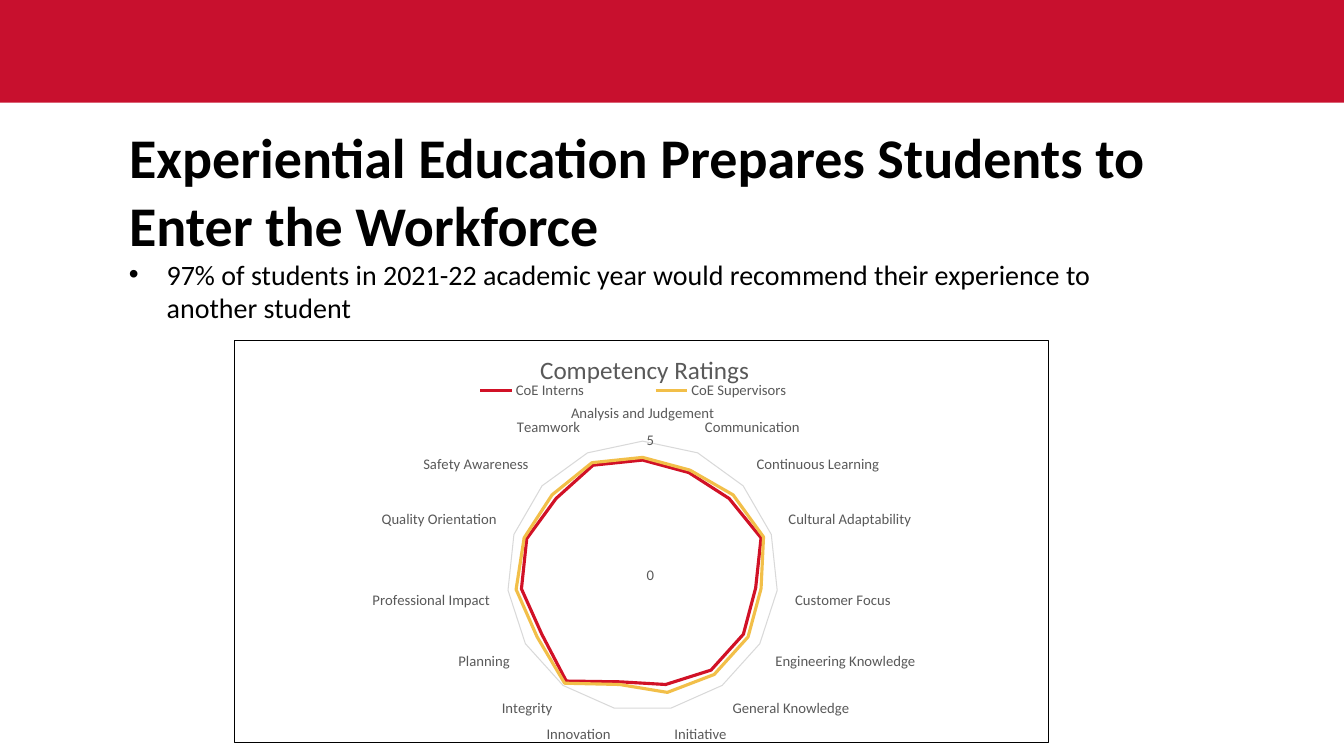
from lxml import etree
from pptx import Presentation
from pptx.chart.data import CategoryChartData as Data
from pptx.dml.color import RGBColor as Rgb
from pptx.enum.chart import XL_CHART_TYPE as Kind, XL_LEGEND_POSITION as Spot, XL_TICK_MARK as Tick
from pptx.enum.shapes import MSO_SHAPE as Shape
from pptx.enum.text import MSO_ANCHOR as Anchor, PP_ALIGN as Align
from pptx.oxml import parse_xml
from pptx.oxml.ns import nsdecls, qn
from pptx.util import Cm, Pt

HUES = {"band": "C8102E", "ink": "000000", "grey": "595959", "grid": "D9D9D9",
        "intern": "D11126", "super": "F2BF49"}
SKILLS = ["Analysis and Judgement", "Communication", "Continuous Learning",
          "Cultural Adaptability", "Customer Focus", "Engineering Knowledge",
          "General Knowledge", "Initiative", "Innovation", "Integrity", "Planning",
          "Professional Impact", "Quality Orientation", "Safety Awareness", "Teamwork"]
RATINGS = [
    ("CoE Interns", "intern",
     [4.3, 4.2, 4.3, 4.6, 4.2, 4.3, 4.3, 4.1, 4, 4.8, 4.3, 4.5, 4.5, 4.3, 4.5]),
    ("CoE Supervisors", "super",
     [4.4, 4.3, 4.5, 4.7, 4.4, 4.5, 4.5, 4.4, 4.1, 4.9, 4.5, 4.7, 4.6, 4.5, 4.6]),
]


def style(font, size, hue="ink", bold=False):
    """Set face, size, colour and weight of a font."""
    font.name, font.size, font.bold = "Calibri", Pt(size), bold
    font.color.rgb = Rgb.from_string(HUES[hue])


def write(frame, text, bullet=False, **look):
    """Write one paragraph into a text frame."""
    frame.word_wrap = True
    frame.vertical_anchor = Anchor.TOP
    para = frame.paragraphs[0]
    para.alignment, para.line_spacing, para.space_before = Align.LEFT, 1.0, Pt(0)
    if bullet:
        props = para._p.get_or_add_pPr()
        props.set("marL", str(Cm(0.95)))
        props.set("indent", str(Cm(-0.95)))
        face = etree.SubElement(props, qn("a:buFont"))
        face.set("typeface", "Arial")
        etree.SubElement(props, qn("a:buChar")).set("char", "•")
    run = para.add_run()
    run.text = text
    style(run.font, **look)


def rule(line, hue, width):
    """Set colour and width of a line."""
    line.color.rgb = Rgb.from_string(HUES[hue])
    line.width = Pt(width)


def place(part, index, *box, inner=False):
    """Give a chart part a fixed layout."""
    for old in part.findall(qn("c:layout")):
        part.remove(old)
    tags = '<c:layoutTarget val="inner"/>' if inner else ""
    tags += '<c:xMode val="edge"/><c:yMode val="edge"/>'
    tags += "".join(f'<c:{key} val="{val}"/>' for key, val in zip("xywh", box))
    part.insert(index, parse_xml(f'<c:layout {nsdecls("c")}><c:manualLayout>{tags}'
                                 '</c:manualLayout></c:layout>'))


class Deck:
    """Hold the deck and its current slide."""

    def __init__(self):
        """Start a wide deck with one title-only slide."""
        self.deck = Presentation()
        self.deck.slide_width, self.deck.slide_height = Cm(33.87), Cm(19.05)
        self.slide = self.deck.slides.add_slide(self.deck.slide_layouts[5])

    def band(self, *box, hue):
        """Add a plain filled band above the title."""
        band = self.slide.shapes.add_shape(Shape.RECTANGLE, *map(Cm, box))
        band.shadow.inherit = False
        band.fill.solid()
        band.fill.fore_color.rgb = Rgb.from_string(HUES[hue])
        band.line.fill.background()

    def title(self, text, *box, **look):
        """Place and fill the title."""
        head = self.slide.shapes.title
        head.left, head.top, head.width, head.height = map(Cm, box)
        write(head.text_frame, text, **look)

    def text(self, text, *box, **look):
        """Add a text box."""
        note = self.slide.shapes.add_textbox(*map(Cm, box))
        write(note.text_frame, text, **look)

    def radar(self, title, cats, rows, *box):
        """Add a framed radar chart."""
        data = Data(number_format="0.0")
        data.categories = cats
        for name, _, vals in rows:
            data.add_series(name, vals)
        chart = self.slide.shapes.add_chart(Kind.RADAR, *map(Cm, box), data).chart
        style(chart.font, 10.5)
        self.head(chart, title)
        self.legend(chart)
        self.axes(chart)
        plot = chart.plots[0]
        plot.vary_by_categories = False
        for line, (_, hue, _) in zip(plot.series, rows):
            line.smooth = False
            rule(line.format.line, hue, 2.25)
        area = chart._chartSpace.find(qn("c:chart"))
        place(area.find(qn("c:plotArea")), 0, 0.335, 0.251, 0.333, 0.671, inner=True)
        area.addnext(parse_xml(
            f'<c:spPr {nsdecls("c", "a")}><a:noFill/><a:ln w="{Pt(0.75)}"><a:solidFill>'
            f'<a:srgbClr val="{HUES["ink"]}"/></a:solidFill></a:ln></c:spPr>'))

    def head(self, chart, text):
        """Put the chart title close to the top edge."""
        chart.has_title = True
        head = chart.chart_title
        head.text_frame.text = text
        style(head.text_frame.paragraphs[0].runs[0].font, 18, "grey")
        head.include_in_layout = False
        place(head._element, 1, 0.37, 0.02)

    def legend(self, chart):
        """Put the legend under the chart title."""
        chart.has_legend = True
        key = chart.legend
        key.position, key.include_in_layout = Spot.TOP, False
        style(key.font, 10.5, "grey")
        place(key._element, 1, 0.22, 0.1, 0.54, 0.05)

    def axes(self, chart):
        """Format both axes and the outer ring."""
        ring, scale = chart.category_axis, chart.value_axis
        for axis in (ring, scale):
            axis.major_tick_mark = axis.minor_tick_mark = Tick.NONE
            style(axis.tick_labels.font, 10.5, "grey")
        ring.has_major_gridlines = False
        rule(ring.format.line, "grid", 0.75)
        scale.minimum_scale, scale.maximum_scale, scale.major_unit = 0, 5, 5
        scale.has_major_gridlines = True
        rule(scale.major_gridlines.format.line, "grid", 0.75)
        scale.format.line.fill.background()
        scale.tick_labels.number_format = "0"
        scale.tick_labels.number_format_is_linked = False


def main():
    """Build and save the slide."""
    deck = Deck()
    deck.band(0, 0, 33.87, 2.59, hue="band")
    deck.title("Experiential Education Prepares Students to Enter the Workforce",
               3, 2.97, 26.82, 3.6, size=40, bold=True)
    deck.text("97% of students in 2021-22 academic year would recommend "
              "their experience to another student",
              3, 6.36, 26.82, 1.95, bullet=True, size=20)
    deck.radar("Competency Ratings", SKILLS, RATINGS, 5.89, 8.56, 20.55, 10.18)
    deck.deck.save("out.pptx")


if __name__ == "__main__":
    main()
